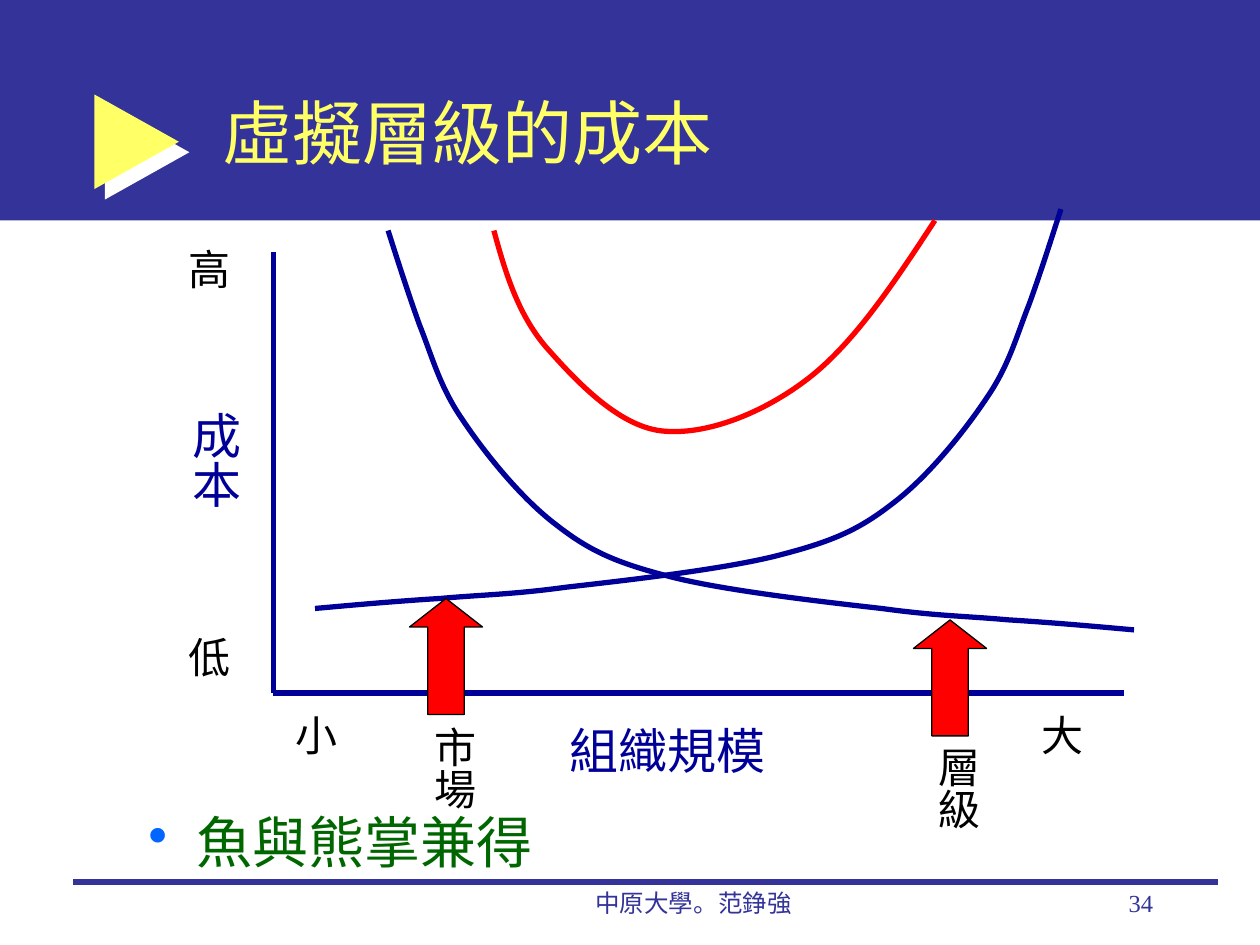
from dataclasses import dataclass

from lxml import etree
from pptx import Presentation
from pptx.dml.color import RGBColor
from pptx.enum import shapes, text
from pptx.oxml import parse_xml
from pptx.oxml.ns import nsdecls, qn
from pptx.util import Inches, Pt


@dataclass(frozen=True)
class Theme:
    band: str = "333399"
    accent: str = "FFFF66"
    white: str = "FFFFFF"
    axis: str = "000099"
    ink: str = "000000"
    red: str = "FF0000"
    bullet: str = "0066FF"
    message: str = "006600"
    body_font: str = "Times New Roman"
    title_font: str = "Noto Sans CJK SC"
    title_size: int = 40
    message_size: int = 32
    axis_size: int = 28
    label_size: int = 24
    footer_size: int = 14
    stroke: float = 3
    outline: float = 0.75


THEME = Theme()

TITLE = ("虛擬層級的成本", (1.67, 0.42, 7.58, 1.25))
MESSAGE = ("魚與熊掌兼得", (1.08, 6.42, 7.92, 0.58))
FOOTERS = [
    ("中原大學。范錚強", (3.92, 7, 3.17, 0.5), text.PP_ALIGN.CENTER),
    ("34", (7.17, 7, 2.08, 0.5), text.PP_ALIGN.RIGHT),
]
# wording, place, reads downwards
AXIS_TITLES = [
    ("組織規模", (4.42, 5.67, 1.76, 0.57), False),
    ("成本", (1.32, 3.17, 0.67, 0.88), True),
]
LABELS = [
    ("小", (2.25, 5.58, 0.53, 0.5), False),
    ("大", (8.17, 5.58, 0.53, 0.5), False),
    ("高", (1.4, 1.88, 0.53, 0.5), False),
    ("低", (1.4, 4.96, 0.53, 0.5), False),
    ("層級", (7.25, 5.83, 0.6, 0.77), True),
    ("市場", (3.25, 5.67, 0.6, 0.77), True),
]
ORIGIN, COST_TOP, SIZE_END = (2.17, 5.5), (2.17, 2), (8.92, 5.5)
FOOTER_RULE = ((0.58, 7), (9.67, 7))
MARKERS = [(3.25, 4.75), (7.25, 4.92)]

# Start point, then two control points and an end point for each Bézier segment
FALLING_COST = [
    (3.08, 1.83),
    (3.16, 2.08), (3.24, 2.33), (3.33, 2.58),
    (3.43, 2.83), (3.49, 3.07), (3.67, 3.33),
    (3.85, 3.6), (4.14, 3.96), (4.42, 4.17),
    (4.69, 4.38), (4.9, 4.47), (5.33, 4.58),
    (5.76, 4.69), (6.56, 4.78), (7, 4.83),
    (7.44, 4.89), (7.67, 4.89), (8, 4.92),
    (8.33, 4.94), (8.67, 4.97), (9, 5),
]
MIRROR_SUM, MIRROR_LIFT = 11.5, 0.17
RISING_COST = [(MIRROR_SUM - x, y - MIRROR_LIFT) for x, y in FALLING_COST]
TOTAL_COST = [
    (3.92, 1.83),
    (4.01, 2.16), (4.11, 2.49), (4.33, 2.75),
    (4.56, 3.01), (4.9, 3.38), (5.25, 3.42),
    (5.6, 3.46), (6.06, 3.28), (6.42, 3),
    (6.78, 2.72), (7.1, 2.24), (7.42, 1.75),
]


def rgb(color):
    return RGBColor.from_string(color)


def inches(values):
    return [Inches(value) for value in values]


def add_text(slide, wording, place, size, color, font=THEME.body_font,
             align=text.PP_ALIGN.LEFT):
    box = slide.shapes.add_textbox(*inches(place))
    box.text_frame.word_wrap = True
    paragraph = box.text_frame.paragraphs[0]
    paragraph.text = wording
    paragraph.alignment = align
    paragraph.font.name = font
    paragraph.font.size = Pt(size)
    paragraph.font.color.rgb = rgb(color)
    return box


def add_label(slide, wording, place, downwards, size, color):
    frame = add_text(slide, wording, place, size, color).text_frame
    frame.word_wrap = False
    frame.auto_size = text.MSO_AUTO_SIZE.SHAPE_TO_FIT_TEXT
    if downwards:
        frame._txBody.bodyPr.set("vert", "eaVert")


def add_shape(slide, kind, place, fill, outline=None):
    shape = slide.shapes.add_shape(kind, *inches(place))
    shape.shadow.inherit = False
    shape.fill.solid()
    shape.fill.fore_color.rgb = rgb(fill)
    if outline:
        shape.line.color.rgb = rgb(outline)
        shape.line.width = Pt(THEME.outline)
    else:
        shape.line.fill.background()
    return shape


def add_line(slide, start, end, color):
    line = slide.shapes.add_connector(
        shapes.MSO_CONNECTOR.STRAIGHT, *inches(start + end))
    line.line.color.rgb = rgb(color)
    line.line.width = Pt(THEME.stroke)
    etree.SubElement(line._element.spPr, qn("a:effectLst"))


def add_curve(slide, points, color):
    """Build an outline from the points, then join each three as one Bézier."""
    start, *controls = [inches(point) for point in points]
    builder = slide.shapes.build_freeform(*start)
    builder.add_line_segments(controls, close=False)
    curve = builder.convert_to_shape()
    curve.shadow.inherit = False
    curve.fill.background()
    curve.line.color.rgb = rgb(color)
    curve.line.width = Pt(THEME.stroke)
    segments = list(curve._element.iter(qn("a:lnTo")))
    for i in range(0, len(segments), 3):
        bezier = etree.SubElement(segments[i].getparent(), qn("a:cubicBezTo"))
        for segment in segments[i:i + 3]:
            bezier.append(segment[0])
            segment.getparent().remove(segment)


def add_header(slide):
    add_shape(slide, shapes.MSO_SHAPE.RECTANGLE, (0, 0, 10, 1.75), THEME.band)
    pointer = add_shape(slide, shapes.MSO_SHAPE.RIGHT_ARROW,
                        (0.75, 0.75, 0.67, 0.75), THEME.accent)
    pointer.adjustments[0], pointer.adjustments[1] = 0.384, 1
    effects = pointer._element.spPr.find(qn("a:effectLst"))
    effects.append(parse_xml(
        f'<a:outerShdw {nsdecls("a")} dist="{Pt(8.5)}" dir="2700000" '
        f'algn="ctr" rotWithShape="0"><a:srgbClr val="{THEME.white}"/>'
        '</a:outerShdw>'))
    title = add_text(slide, *TITLE, THEME.title_size, THEME.accent,
                     THEME.title_font)
    title.text_frame.vertical_anchor = text.MSO_ANCHOR.MIDDLE


def add_message(slide):
    box = add_text(slide, *MESSAGE, THEME.message_size, THEME.message)
    paragraph = box.text_frame.paragraphs[0]
    paragraph.line_spacing = 0.9
    properties = paragraph._p.get_or_add_pPr()
    properties.set("marL", str(Inches(0.38)))
    properties.set("indent", str(Inches(-0.38)))
    font = properties.find(qn("a:defRPr"))
    font.addprevious(parse_xml(
        f'<a:buClr {nsdecls("a")}><a:srgbClr val="{THEME.bullet}"/></a:buClr>'))
    font.addprevious(parse_xml(f'<a:buChar {nsdecls("a")} char="•"/>'))


def main():
    deck = Presentation()
    deck.slide_width, deck.slide_height = Inches(10), Inches(7.5)
    slide = deck.slides.add_slide(deck.slide_layouts[6])

    add_header(slide)
    add_line(slide, *FOOTER_RULE, THEME.band)
    for wording, place, align in FOOTERS:
        add_text(slide, wording, place, THEME.footer_size, THEME.band,
                 align=align)
    add_message(slide)

    add_line(slide, COST_TOP, ORIGIN, THEME.axis)
    add_line(slide, ORIGIN, SIZE_END, THEME.axis)
    for axis_title in AXIS_TITLES:
        add_label(slide, *axis_title, THEME.axis_size, THEME.axis)
    for points, color in ((FALLING_COST, THEME.axis),
                          (RISING_COST, THEME.axis),
                          (TOTAL_COST, THEME.red)):
        add_curve(slide, points, color)
    for left, top in MARKERS:
        marker = add_shape(slide, shapes.MSO_SHAPE.UP_ARROW,
                           (left, top, 0.58, 0.92), THEME.red, THEME.ink)
        marker.adjustments[0], marker.adjustments[1] = 0.5, 0.39
    for label in LABELS:
        add_label(slide, *label, THEME.label_size, THEME.ink)

    deck.save("out.pptx")


if __name__ == "__main__":
    main()
